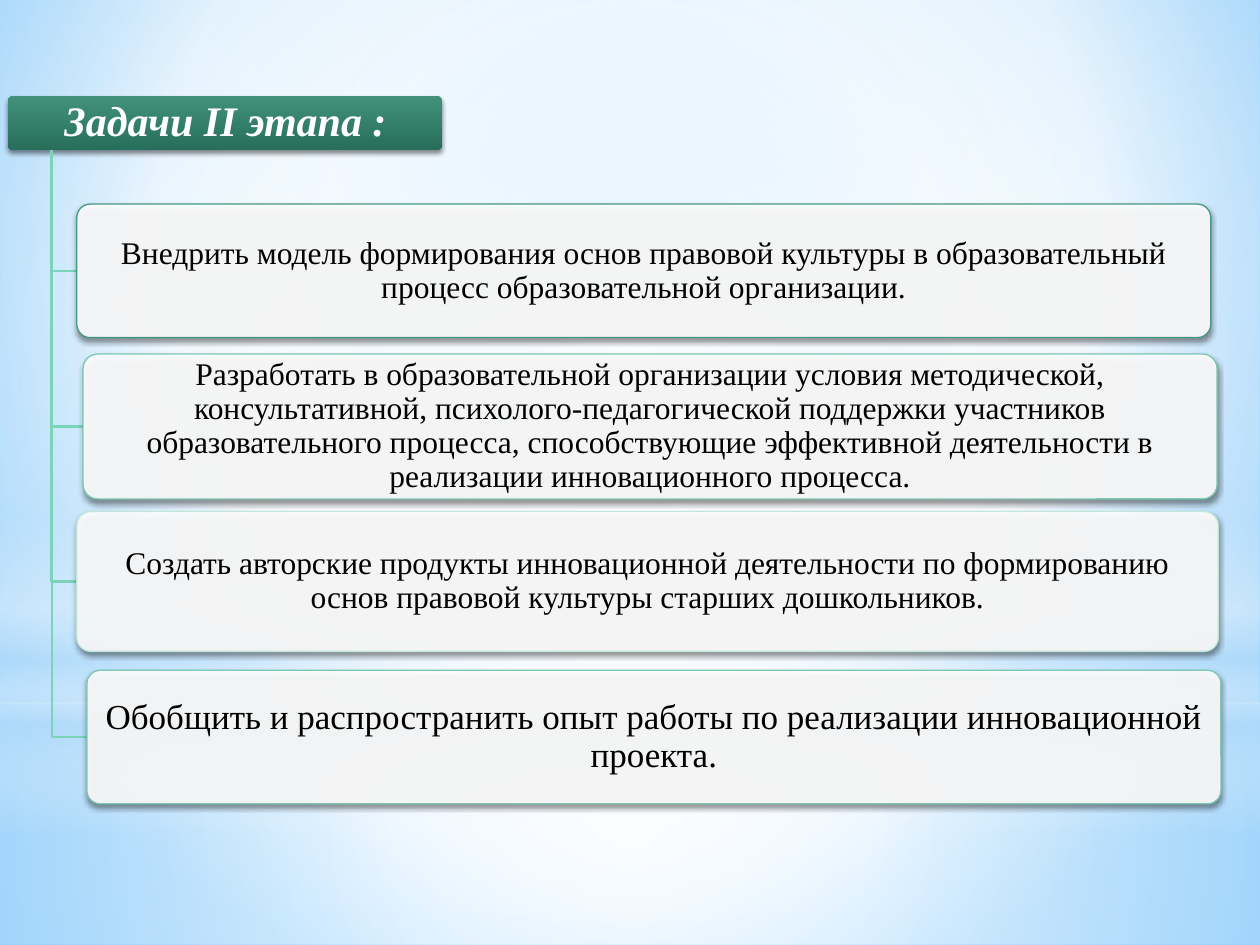
from pptx import Presentation
from pptx.dml.color import RGBColor
from pptx.enum.shapes import MSO_SHAPE
from pptx.enum.text import MSO_ANCHOR, MSO_AUTO_SIZE, PP_ALIGN
from pptx.oxml import parse_xml
from pptx.oxml.ns import nsdecls, qn
from pptx.util import Inches, Pt

RECT, OVAL, ROUND = MSO_SHAPE.RECTANGLE, MSO_SHAPE.OVAL, MSO_SHAPE.ROUNDED_RECTANGLE
MIDDLE, CENTER, FIXED = MSO_ANCHOR.MIDDLE, PP_ALIGN.CENTER, MSO_AUTO_SIZE.NONE

WIDE, HIGH = 10, 7.5
FONT = "Times New Roman"
WHITE, SKY, MINT = "FFFFFF", "B4DCFA", "7BD4B9"
MID = (50, 50, 50, 50)
TRUNK, ROOT = 0.41, 1.19

BACK = [(0, "9ED5FF", 100), (60, WHITE, 100), (100, "5BB9FF", 100)]
LAYERS = [
    (RECT, 5.58, 1.92, [(0, WHITE, 91), (37, WHITE, 76), (100, SKY, 79)], MID),
    (RECT, 0, 5.58, [(0, WHITE, 89), (48, WHITE, 62), (100, SKY, 79)], MID),
    (RECT, 4.12, 2.5, [(0, WHITE, 0), (29, WHITE, 30), (45, SKY, 40),
                       (55, WHITE, 26), (65, SKY, 60), (100, WHITE, 0)], None),
    (OVAL, 1.75, 5.58, [(0, WHITE, 100), (56, WHITE, 0)], MID),
]
HEAD = "Задачи II этапа :"
TASKS = [
    ("Внедрить модель формирования основ правовой культуры в образовательный "
     "процесс образовательной организации.", (0.61, 1.62, 9, 1.06), "459881", 18),
    ("Разработать в образовательной организации условия методической, "
     "консультативной, психолого-педагогической поддержки участников "
     "образовательного процесса, способствующие эффективной деятельности в "
     "реализации инновационного процесса.", (0.66, 2.81, 9, 1.15), "7BC7B0", 18),
    ("Создать авторские продукты инновационной деятельности по формированию "
     "основ правовой культуры старших дошкольников.", (0.61, 4.06, 9.06, 1.11), "C1E6DA", 18),
    ("Обобщить и распространить опыт работы по реализации инновационной "
     "проекта.", (0.69, 5.32, 9, 1.06), "7BC7B0", 20),
]


def tint(code, alpha):
    return f'<a:srgbClr val="{code}"><a:alpha val="{alpha * 1000}"/></a:srgbClr>'


def blend(stops, focus=None):
    marks = "".join(f'<a:gs pos="{pos * 1000}">{tint(code, alpha)}</a:gs>'
                    for pos, code, alpha in stops)
    if focus:
        sides = " ".join(f'{side}="{share * 1000}"' for side, share in zip("ltrb", focus))
        way = f'<a:path path="circle"><a:fillToRect {sides}/></a:path>'
    else:
        way = '<a:lin ang="5400000" scaled="0"/>'
    return (f'<a:gradFill {nsdecls("a")} rotWithShape="1"><a:gsLst>{marks}</a:gsLst>'
            f'{way}</a:gradFill>')


def paint(fill, host, xml):
    fill.background()
    host.replace(host.find(qn("a:noFill")), parse_xml(xml))


def block(kind, area, xml, edge=None, shade=False):
    shape = slide.shapes.add_shape(kind, *map(Inches, area))
    shape.shadow.inherit = False
    props = shape._element.spPr
    paint(shape.fill, props, xml)
    if edge:
        shape.line.color.rgb = RGBColor.from_string(edge)
        shape.line.width = Pt(0.75)
    else:
        shape.line.fill.background()
    if kind == ROUND:
        shape.adjustments[0] = 0.1
    if shade:
        props.find(qn("a:effectLst")).append(parse_xml(
            f'<a:outerShdw {nsdecls("a")} blurRad="{Pt(3.1)}" dist="{Pt(1.8)}" '
            f'dir="5400000" rotWithShape="0">{tint("000000", 45)}</a:outerShdw>'))
    return shape


def write(shape, text, size, color="000000", bold=False, slant=False):
    frame = shape.text_frame
    frame.word_wrap, frame.auto_size = True, FIXED
    frame.vertical_anchor = MIDDLE
    frame.margin_left = frame.margin_right = Inches(0.04)
    frame.margin_top = frame.margin_bottom = Inches(0.03)
    para = frame.paragraphs[0]
    para.alignment, para.line_spacing = CENTER, 0.9
    run = para.add_run()
    run.text = text
    font = run.font
    font.name, font.size = FONT, Pt(size)
    font.bold, font.italic = bold, slant
    font.color.rgb = RGBColor.from_string(color)


def branch(left, mid):
    pen = slide.shapes.build_freeform(Inches(TRUNK), Inches(ROOT))
    pen.add_line_segments([(Inches(TRUNK), Inches(mid)), (Inches(left), Inches(mid))],
                          close=False)
    elbow = pen.convert_to_shape()
    elbow.shadow.inherit = False
    elbow.fill.background()
    elbow.line.color.rgb = RGBColor.from_string(MINT)
    elbow.line.width = Pt(1.25)


deck = Presentation()
deck.slide_width, deck.slide_height = Inches(WIDE), Inches(HIGH)
slide = deck.slides.add_slide(deck.slide_layouts[5])

back = slide.background.fill
back.background()
paint(back, slide._element.find(".//" + qn("p:bgPr")), blend(BACK, (20, 10, 20, 60)))

for kind, top, high, stops, focus in LAYERS:
    block(kind, (0, top, WIDE, high), blend(stops, focus))

block(ROUND, (0.06, 0.76, 3.45, 0.43),
      blend([(0, "41917B", 100), (100, "286F5B", 100)]), shade=True)
title = slide.shapes.title
title.left, title.top, title.width, title.height = map(Inches, (0.08, 0.77, 3.42, 0.41))
write(title, HEAD, 24, WHITE, bold=True, slant=True)
slide.shapes._spTree.append(title._element)

glass = f'<a:solidFill {nsdecls("a")}>{tint(WHITE, 90)}</a:solidFill>'
for text, area, edge, size in TASKS:
    left, top, wide, high = area
    branch(left, top + high / 2)
    write(block(ROUND, area, glass, edge, shade=True), text, size)

deck.save("out.pptx")
